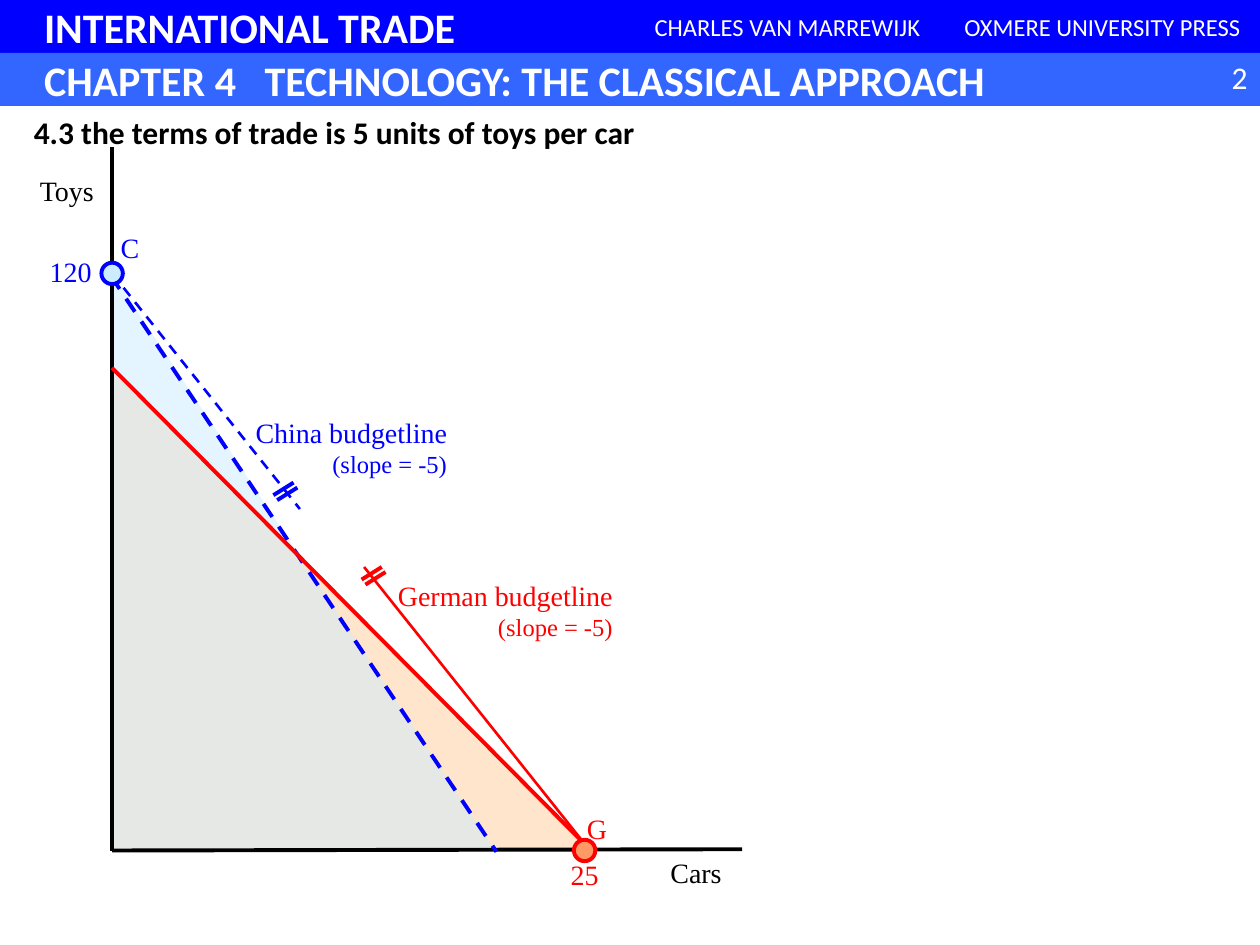
from dataclasses import dataclass

from pptx import Presentation
from pptx.dml.color import RGBColor
from pptx.enum.dml import MSO_LINE
from pptx.enum.shapes import MSO_CONNECTOR, MSO_SHAPE as Shape
from pptx.enum.text import MSO_ANCHOR as Anchor, MSO_AUTO_SIZE as AutoSize, PP_ALIGN as Align
from pptx.oxml.ns import qn
from pptx.util import Inches, Pt
from lxml.etree import SubElement


@dataclass(frozen=True)
class Theme:
    navy: str = "0000FF"
    blue: str = "3366FF"
    red: str = "FF0000"
    black: str = "000000"
    white: str = "FFFFFF"
    peach: str = "FFCC99"
    orange: str = "FF9966"
    sky: str = "CCECFF"
    sans: str = "Calibri"
    serif: str = "Times New Roman"
    title: int = 24
    heading: int = 18
    label: int = 16
    small: int = 14
    thin: float = 1.5
    thick: float = 2.25


theme = Theme()

BANNER = 0.42
INDENT = 0.35
CHAPTER_TAB = 1.75
TICK_SPAN = (0.16, -0.1)
TICK_STEP = (0.03, 0.04)
DOT = 0.17

banners = [
    ("INTERNATIONAL TRADE", (0, 0, 10, BANNER), theme.navy, theme.title, Align.LEFT),
    ("CHARLES VAN MARREWIJK", (5, 0, 2.5, BANNER), theme.navy, theme.small, Align.CENTER),
    ("OXMERE UNIVERSITY PRESS", (7.5, 0, 2.5, BANNER), theme.navy, theme.small, Align.CENTER),
    ("CHAPTER 4\tTECHNOLOGY: THE CLASSICAL APPROACH", (0, BANNER, 10, BANNER),
     theme.blue, theme.title, Align.LEFT),
]
slopes = [
    ((2.89, 4.5), (4.69, 6.76), (2.87, 4.6), theme.red, False),
    ((0.89, 2.17), (2.38, 4.04), (2.17, 3.93), theme.navy, True),
]
areas = [
    ((0.89, 2.92, 3.79, 3.82), theme.peach),
    ((0.89, 2.17, 3.04, 4.58), theme.sky),
]
axes = [((0.89, 1.17), (0.89, 6.75)), ((0.89, 6.75), (5.89, 6.74))]
frontiers = [
    ((0.88, 2.19), (3.94, 6.76), theme.navy, True),
    ((0.89, 2.92), (4.7, 6.76), theme.red, False),
]
points = [
    ((4.64, 6.75), theme.orange, theme.red),
    ((0.89, 2.17), theme.sky, theme.navy),
]
labels = [
    ("Toys", (0.17, 1.33, 0.72, 0.4), theme.black, Align.CENTER),
    ("Cars", (5.16, 6.74, 0.73, 0.4), theme.black, Align.CENTER),
    ("25", (4.4, 6.76, 0.48, 0.4), theme.red, Align.CENTER),
    ("120", (0.25, 1.97, 0.62, 0.4), theme.navy, Align.CENTER),
    ("C", (0.86, 1.78, 0.38, 0.4), theme.navy, Align.LEFT),
    ("G", (4.56, 6.39, 0.4, 0.4), theme.red, Align.LEFT),
]
budget_labels = [
    ("German budgetline", (3.06, 4.54, 2.42, 0.64), theme.red),
    ("China budgetline", (1.93, 3.25, 2.13, 0.64), theme.navy),
]
SLOPE_TEXT = "(slope = -5)"
QUESTION = "4.3 the terms of trade is 5 units of toys per car"


def rgb(code):
    return RGBColor.from_string(code)


def write(para, text, *, size, color, font=theme.serif, bold=False, align=Align.LEFT):
    para.alignment = align
    span = para.add_run()
    span.text = text
    span.font.size = Pt(size)
    span.font.name = font
    span.font.bold = bold
    span.font.color.rgb = rgb(color)


def add_label(page, area, wrap=False):
    frame = page.shapes.add_textbox(*map(Inches, area)).text_frame
    frame.word_wrap = wrap
    frame.auto_size = AutoSize.SHAPE_TO_FIT_TEXT
    return frame


def add_figure(page, kind, area, fill, line=None, alpha=None):
    figure = page.shapes.add_shape(kind, *map(Inches, area))
    figure.shadow.inherit = False
    figure.fill.solid()
    figure.fill.fore_color.rgb = rgb(fill)
    if alpha:
        color = figure.fill._xPr.find(qn("a:solidFill"))[0]
        SubElement(color, qn("a:alpha")).set("val", str(alpha * 1000))
    if line:
        figure.line.color.rgb = rgb(line)
        figure.line.width = Pt(theme.thick)
    else:
        figure.line.fill.background()
    return figure


def add_line(parent, start, end, color, width=theme.thick, dashed=False):
    line = parent.shapes.add_connector(MSO_CONNECTOR.STRAIGHT, *map(Inches, (*start, *end)))
    line.line.color.rgb = rgb(color)
    line.line.width = Pt(width)
    if dashed:
        line.line.dash_style = MSO_LINE.DASH
    SubElement(line._element.spPr, qn("a:effectLst"))


def add_banner(page, text, area, fill, size, align):
    box = add_figure(page, Shape.RECTANGLE, area, fill)
    frame = box.text_frame
    frame.vertical_anchor = Anchor.MIDDLE
    para = frame.paragraphs[0]
    write(para, text, size=size, color=theme.white, font=theme.sans,
          bold=size == theme.title, align=align)
    if align == Align.LEFT:
        frame.margin_left = Inches(INDENT)
    if "\t" in text:
        stops = SubElement(para._p.get_or_add_pPr(), qn("a:tabLst"))
        stop = SubElement(stops, qn("a:tab"))
        stop.set("pos", str(Inches(CHAPTER_TAB)))
        stop.set("algn", "l")


def add_slope(page, start, end, tick, color, dashed):
    group = page.shapes.add_group_shape()
    add_line(group, start, end, color, theme.thin, dashed)
    for index in range(2):
        left, top = (at + index * step for at, step in zip(tick, TICK_STEP))
        add_line(group, (left, top), (left + TICK_SPAN[0], top + TICK_SPAN[1]), color)


def main():
    deck = Presentation()
    deck.slide_width, deck.slide_height = Inches(10), Inches(7.5)
    page = deck.slides.add_slide(deck.slide_layouts[6])

    for banner in banners:
        add_banner(page, *banner)
    number = add_label(page, (9.33, 0.41, 0.67, 0.4), wrap=True)
    write(number.paragraphs[0], "2", size=theme.heading, color=theme.white,
          font=theme.sans, align=Align.RIGHT)

    for slope in slopes:
        add_slope(page, *slope)
    for area, fill in areas:
        add_figure(page, Shape.RIGHT_TRIANGLE, area, fill, alpha=50)
    for start, end in axes:
        add_line(page, start, end, theme.black)
    for start, end, color, dashed in frontiers:
        add_line(page, start, end, color, dashed=dashed)
    for (x, y), fill, line in points:
        add_figure(page, Shape.OVAL, (x - DOT / 2, y - DOT / 2, DOT, DOT), fill, line)

    for text, area, color, align in labels:
        write(add_label(page, area).paragraphs[0], text, size=theme.label,
              color=color, align=align)
    for text, area, color in budget_labels:
        frame = add_label(page, area)
        write(frame.paragraphs[0], text, size=theme.label, color=color)
        write(frame.add_paragraph(), SLOPE_TEXT, size=theme.small, color=color,
              align=Align.RIGHT)
    question = add_label(page, (0.17, 0.85, 5.06, 0.4))
    write(question.paragraphs[0], QUESTION, size=theme.heading, color=theme.black,
          font=theme.sans, bold=True)

    deck.save("out.pptx")


if __name__ == "__main__":
    main()
